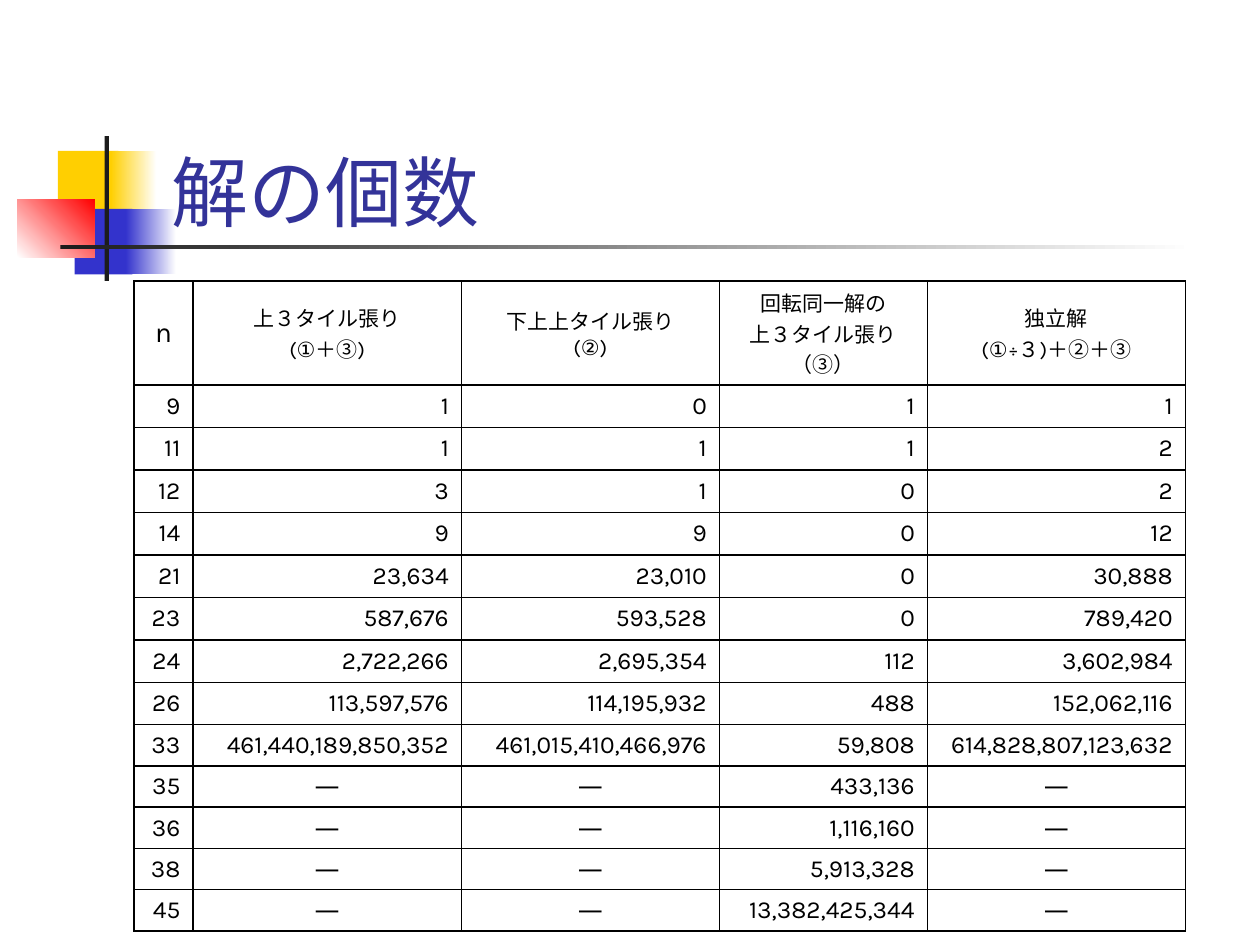
from typing import NamedTuple, Optional

from lxml import etree
from pptx import Presentation
from pptx import util as u
from pptx.dml.color import RGBColor
from pptx.enum import shapes, text
from pptx.oxml.ns import qn

PX_PER_INCH = 252
FONT = "Karla"
COLORS = {
    "yellow": "FFCF01",
    "blue": "3333CC",
    "red": "FF0000",
    "dark": "1C1C1C",
    "white": "FFFFFF",
    "title": "333399",
    "black": "000000",
}


class Block(NamedTuple):
    left: int
    top: int
    width: int
    height: int
    color: str
    fade_to: Optional[str] = None
    angle: int = 0


BLOCKS = [
    Block(116, 302, 121, 131, "yellow"),
    Block(222, 302, 91, 131, "yellow", "white"),
    Block(149, 418, 116, 131, "blue"),
    Block(252, 418, 101, 131, "blue", "white"),
    Block(35, 398, 154, 117, "white", "red", 45),
    Block(209, 272, 9, 290, "dark"),
    Block(121, 490, 2268, 9, "dark", "white"),
]

NONE = "―"
HEADERS = [
    "n",
    "上３タイル張り\n(①＋③)",
    "下上上タイル張り\n(②)",
    "回転同一解の\n上３タイル張り\n（③）",
    "独立解\n(①÷３)＋②＋③",
]
COUNTS = [
    ("9", "1", "0", "1", "1"),
    ("11", "1", "1", "1", "2"),
    ("12", "3", "1", "0", "2"),
    ("14", "9", "9", "0", "12"),
    ("21", "23,634", "23,010", "0", "30,888"),
    ("23", "587,676", "593,528", "0", "789,420"),
    ("24", "2,722,266", "2,695,354", "112", "3,602,984"),
    ("26", "113,597,576", "114,195,932", "488", "152,062,116"),
    ("33", "461,440,189,850,352", "461,015,410,466,976", "59,808", "614,828,807,123,632"),
    ("35", NONE, NONE, "433,136", NONE),
    ("36", NONE, NONE, "1,116,160", NONE),
    ("38", NONE, NONE, "5,913,328", NONE),
    ("45", NONE, NONE, "13,382,425,344", NONE),
]
COLUMN_WIDTHS = [118, 537, 516, 416, 516]
ROW_HEIGHTS = [208] + [85] * 8 + [82] * 5


def px(length: int) -> u.Emu:
    return u.Emu(round(length * 914400 / PX_PER_INCH))


def rgb(name: str) -> RGBColor:
    return RGBColor.from_string(COLORS[name])


def format_frame(frame, size: int, color: str, align) -> None:
    for para in frame.paragraphs:
        para.alignment = align
        for span in para.runs:
            span.font.name = FONT
            span.font.size = u.Pt(size)
            span.font.bold = False
            span.font.color.rgb = rgb(color)


def draw_block(page, block: Block) -> None:
    box = page.shapes.add_shape(
        shapes.MSO_SHAPE.RECTANGLE,
        px(block.left), px(block.top), px(block.width), px(block.height))
    box.shadow.inherit = False
    box.line.fill.background()
    if block.fade_to is None:
        box.fill.solid()
        box.fill.fore_color.rgb = rgb(block.color)
        return
    box.fill.gradient()
    box.fill.gradient_angle = block.angle
    for stop, name in zip(box.fill.gradient_stops, (block.color, block.fade_to)):
        stop.color.rgb = rgb(name)


def set_borders(cell) -> None:
    properties = cell._tc.get_or_add_tcPr()
    for index, side in enumerate(("a:lnL", "a:lnR", "a:lnT", "a:lnB")):
        line = etree.Element(qn(side), w=str(u.Pt(1)))
        fill = etree.SubElement(line, qn("a:solidFill"))
        etree.SubElement(fill, qn("a:srgbClr"), val=COLORS["black"])
        properties.insert(index, line)


def fill_cell(cell, words: str, size: int, align) -> None:
    cell.text_frame.text = words
    cell.vertical_anchor = text.MSO_ANCHOR.MIDDLE
    cell.fill.background()
    format_frame(cell.text_frame, size, "black", align)
    set_borders(cell)


def draw_table(page) -> None:
    table = page.shapes.add_table(
        len(ROW_HEIGHTS), len(COLUMN_WIDTHS), px(268), px(562),
        px(sum(COLUMN_WIDTHS)), px(sum(ROW_HEIGHTS))).table
    table.first_row = False
    table.horz_banding = False
    for column, width in zip(table.columns, COLUMN_WIDTHS):
        column.width = px(width)
    for row, height in zip(table.rows, ROW_HEIGHTS):
        row.height = px(height)

    for column, words in enumerate(HEADERS):
        size = 16 if column == 0 else 12
        fill_cell(table.cell(0, column), words, size, text.PP_ALIGN.CENTER)
    for row, values in enumerate(COUNTS, start=1):
        for column, value in enumerate(values):
            align = text.PP_ALIGN.CENTER if value == NONE else text.PP_ALIGN.RIGHT
            fill_cell(table.cell(row, column), value, 14, align)


def draw_title(page) -> None:
    title = page.shapes.title
    title.left, title.top, title.width, title.height = map(px, (318, 171, 2147, 315))
    frame = title.text_frame
    frame.text = "解の個数"
    frame.auto_size = text.MSO_AUTO_SIZE.NONE
    frame.vertical_anchor = text.MSO_ANCHOR.BOTTOM
    format_frame(frame, 44, "title", text.PP_ALIGN.LEFT)
    # Bring the title in front of the blocks
    page.shapes._spTree.append(title._element)


def main() -> None:
    deck = Presentation()
    deck.slide_width, deck.slide_height = px(2520), px(1890)
    page = deck.slides.add_slide(deck.slide_layouts[5])

    # Coloured blocks and rules beside the title
    for block in BLOCKS:
        draw_block(page, block)

    # Title and solution counts
    draw_title(page)
    draw_table(page)
    deck.save("out.pptx")


if __name__ == "__main__":
    main()
